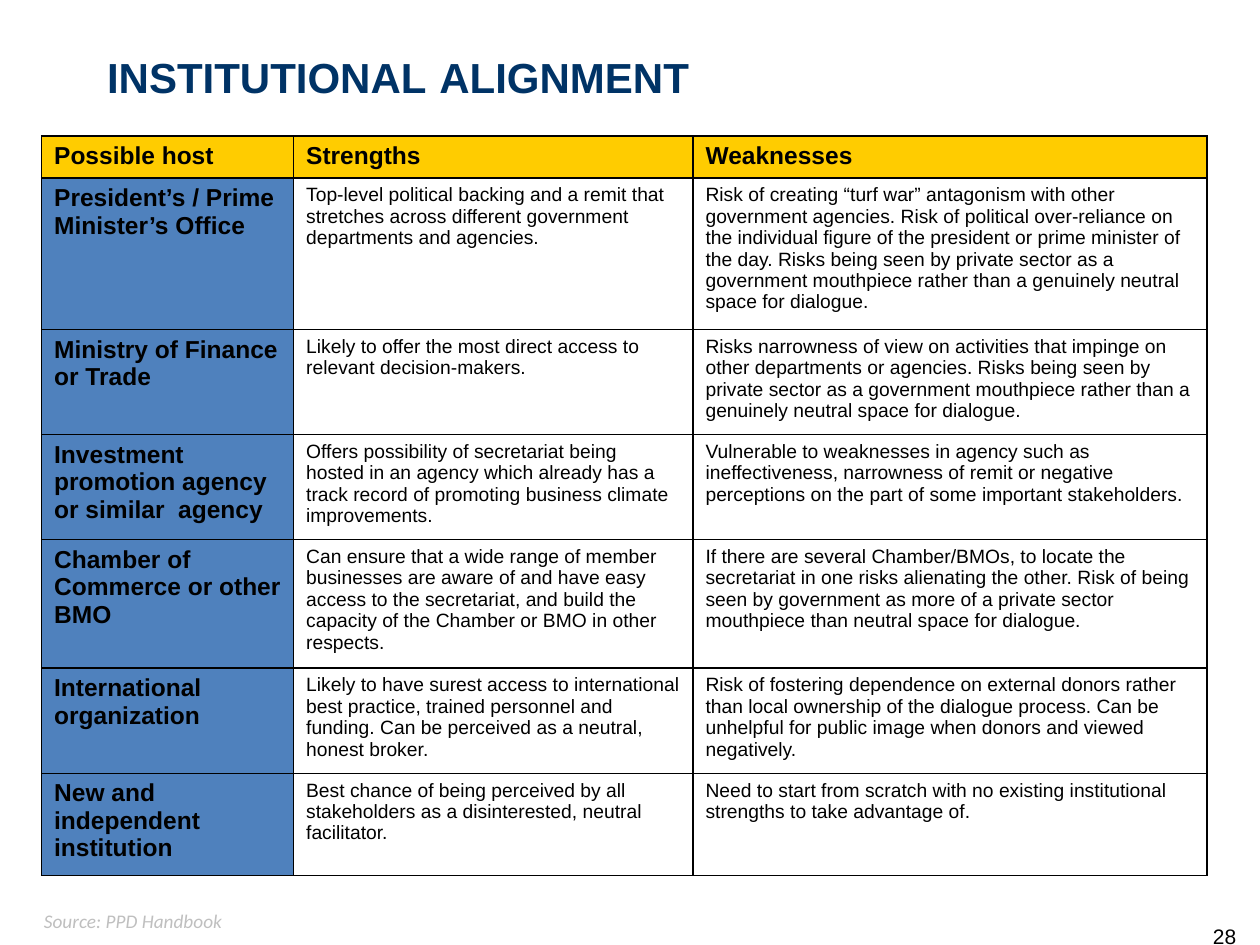
from pptx import Presentation
from pptx.dml.color import RGBColor
from pptx.enum.text import MSO_ANCHOR, MSO_AUTO_SIZE, PP_ALIGN
from pptx.oxml import parse_xml
from pptx.oxml.ns import nsdecls
from pptx.util import Inches, Pt


def rgb(value):
    return RGBColor.from_string(value)


def set_font(font, size, color="000000", name="Arial", bold=False, italic=False):
    font.size, font.name, font.bold, font.italic = Pt(size), name, bold, italic
    font.color.rgb = rgb(color)


prs = Presentation()
prs.slide_width, prs.slide_height = Inches(10), Inches(7.5)
s = prs.slides.add_slide(prs.slide_layouts[5])

# Title
title = s.shapes.title
title.left, title.top = Inches(0.75), Inches(0.33)
title.width, title.height = Inches(4.86), Inches(0.54)
tf = title.text_frame
tf.word_wrap = False
tf.auto_size = MSO_AUTO_SIZE.SHAPE_TO_FIT_TEXT
tf.vertical_anchor = MSO_ANCHOR.MIDDLE
p = tf.paragraphs[0]
p.alignment = PP_ALIGN.LEFT
for text, size in [("INSTITUTIONAL", 24), (" ", 26), ("ALIGNMENT", 24)]:
    r = p.add_run()
    r.text = text
    set_font(r.font, size, "003366", bold=True)

# Table of possible hosts
rows = [
    ("Possible host", "Strengths", "Weaknesses"),
    ("President’s / Prime Minister’s Office",
     "Top-level political backing and a remit that stretches across different "
     "government departments and agencies.",
     "Risk of creating “turf war” antagonism with other government agencies. "
     "Risk of political over-reliance on the individual figure of the president "
     "or prime minister of the day. Risks being seen by private sector as a "
     "government mouthpiece rather than a genuinely neutral space for dialogue."),
    ("Ministry of Finance or Trade",
     "Likely to offer the most direct access to relevant decision-makers.",
     "Risks narrowness of view on activities that impinge on other departments "
     "or agencies. Risks being seen by private sector as a government mouthpiece "
     "rather than a genuinely neutral space for dialogue."),
    ("Investment promotion agency or similar  agency",
     "Offers possibility of secretariat being hosted in an agency which already "
     "has a track record of promoting business climate improvements.",
     "Vulnerable to weaknesses in agency such as ineffectiveness, narrowness of "
     "remit or negative perceptions on the part of some important stakeholders."),
    ("Chamber of Commerce or other BMO",
     "Can ensure that a wide range of member businesses are aware of and have "
     "easy access to the secretariat, and build the capacity of the Chamber or "
     "BMO in other respects.",
     "If there are several Chamber/BMOs, to locate the secretariat in one risks "
     "alienating the other. Risk of being seen by government as more of a "
     "private sector mouthpiece than neutral space for dialogue."),
    ("International organization",
     "Likely to have surest access to international best practice, trained "
     "personnel and funding. Can be perceived as a neutral, honest broker.",
     "Risk of fostering dependence on external donors rather than local "
     "ownership of the dialogue process. Can be unhelpful for public image when "
     "donors and viewed negatively."),
    ("New and independent institution",
     "Best chance of being perceived by all stakeholders as a disinterested, "
     "neutral facilitator.",
     "Need to start from scratch with no existing institutional strengths to "
     "take advantage of."),
]
col_widths = [2, 3.17, 4.08]
row_heights = [0.33, 1.2, 0.83, 0.83, 1.02, 0.83, 0.81]
table = s.shapes.add_table(len(rows), len(col_widths), Inches(0.33), Inches(1.08),
                           Inches(sum(col_widths)), Inches(sum(row_heights))).table
table.first_row = table.horz_banding = False
for col, width in zip(table.columns, col_widths):
    col.width = Inches(width)
for row, height in zip(table.rows, row_heights):
    row.height = Inches(height)

for i, texts in enumerate(rows):
    for j, text in enumerate(texts):
        cell = table.cell(i, j)
        # Borders come before the fill in the cell properties
        tcPr = cell._tc.get_or_add_tcPr()
        for side in ("lnL", "lnR", "lnT", "lnB"):
            tcPr.append(parse_xml(
                f'<a:{side} {nsdecls("a")} w="{Pt(1)}"><a:solidFill>'
                f'<a:srgbClr val="000000"/></a:solidFill></a:{side}>'))
        heading = i == 0 or j == 0
        if heading:
            cell.fill.solid()
            cell.fill.fore_color.rgb = rgb("FFCC00" if i == 0 else "4F81BD")
        else:
            cell.fill.background()
        cell.text = text
        set_font(cell.text_frame.paragraphs[0].font, 14 if heading else 11, bold=heading)

# Source and page number
footers = [
    ("Source: PPD Handbook", 0.25, 7.17, 4.42, 0.29, PP_ALIGN.LEFT,
     dict(size=11, color="BFBFBF", name="Calibri", italic=True)),
    ("28", 8.83, 7.28, 1.08, 0.3, PP_ALIGN.RIGHT, dict(size=12)),
]
for text, left, top, width, height, align, style in footers:
    tf = s.shapes.add_textbox(Inches(left), Inches(top), Inches(width), Inches(height)).text_frame
    tf.word_wrap = True
    tf.auto_size = MSO_AUTO_SIZE.SHAPE_TO_FIT_TEXT
    p = tf.paragraphs[0]
    p.text, p.alignment = text, align
    set_font(p.font, **style)

prs.save("out.pptx")
